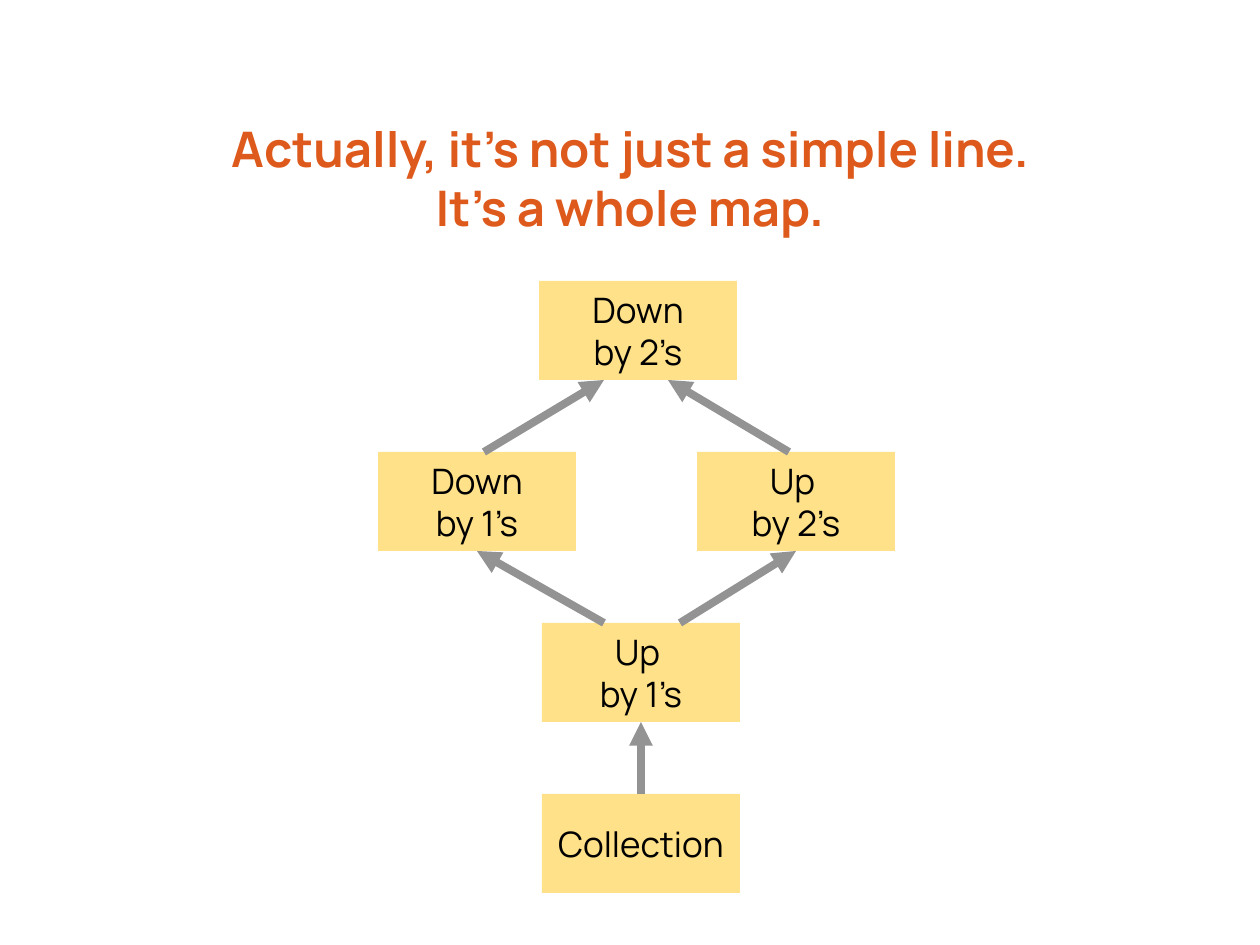
from lxml import etree
from pptx import Presentation
from pptx import util as u
from pptx.dml.color import RGBColor
from pptx.enum import shapes, text
from pptx.oxml import ns

THEME = dict(
    font="Manrope", title="DE5A1C", box="FEE189", ink="000000", arrow="929392",
    title_pt=28, box_pt=20, arrow_pt=4.5,
)


def px(n):
    return u.Emu(round(n * 914400 / 126))


def write(sp, words, anchor, **font):
    tf = sp.text_frame
    tf.word_wrap = True
    tf.vertical_anchor = anchor
    p = tf.paragraphs[0]
    p.text = words
    p.alignment = text.PP_ALIGN.CENTER
    color = font.pop("color")
    for r in p.runs:
        r.font.color.rgb = RGBColor.from_string(color)
        for name, value in font.items():
            setattr(r.font, name, value)


prs = Presentation()
prs.slide_width, prs.slide_height = px(1260), px(945)
s = prs.slides.add_slide(prs.slide_layouts[6])

title = s.shapes.add_textbox(px(50), px(131), px(1160), px(105))
for side in ("left", "top", "right", "bottom"):
    setattr(title.text_frame, f"margin_{side}", 0)
write(title, "Actually, it’s not just a simple line.\nIt’s a whole map.",
      text.MSO_ANCHOR.BOTTOM, name=THEME["font"], size=u.Pt(THEME["title_pt"]),
      bold=True, color=THEME["title"])

TOP, PITCH, BOX_W, BOX_H = 281, 171, 198, 99
boxes = [
    ("Collection", 542, 3),
    ("Up \nby 1’s", 542, 2),
    ("Down\nby 1’s", 378, 1),
    ("Up \nby 2’s", 697, 1),
    ("Down\nby 2’s", 539, 0),
]
for words, x, row in boxes:
    sp = s.shapes.add_shape(shapes.MSO_SHAPE.RECTANGLE, px(x), px(TOP + row * PITCH),
                            px(BOX_W), px(BOX_H))
    sp.shadow.inherit = False
    sp.fill.solid()
    sp.fill.fore_color.rgb = RGBColor.from_string(THEME["box"])
    sp.line.fill.background()
    write(sp, words, text.MSO_ANCHOR.MIDDLE, name=THEME["font"],
          size=u.Pt(THEME["box_pt"]), color=THEME["ink"])

arrows = [(641, 641, 3), (604, 477, 2), (680, 796, 2), (484, 604, 1), (789, 668, 1)]
for x1, x2, row in arrows:
    start = TOP + row * PITCH
    end = start - PITCH + BOX_H
    cx = s.shapes.add_connector(shapes.MSO_CONNECTOR.STRAIGHT,
                                px(x1), px(start), px(x2), px(end))
    cx.line.color.rgb = RGBColor.from_string(THEME["arrow"])
    cx.line.width = u.Pt(THEME["arrow_pt"])
    etree.SubElement(cx.line._get_or_add_ln(), ns.qn("a:tailEnd"), type="triangle")
    etree.SubElement(cx._element.spPr, ns.qn("a:effectLst"))

prs.save("out.pptx")
